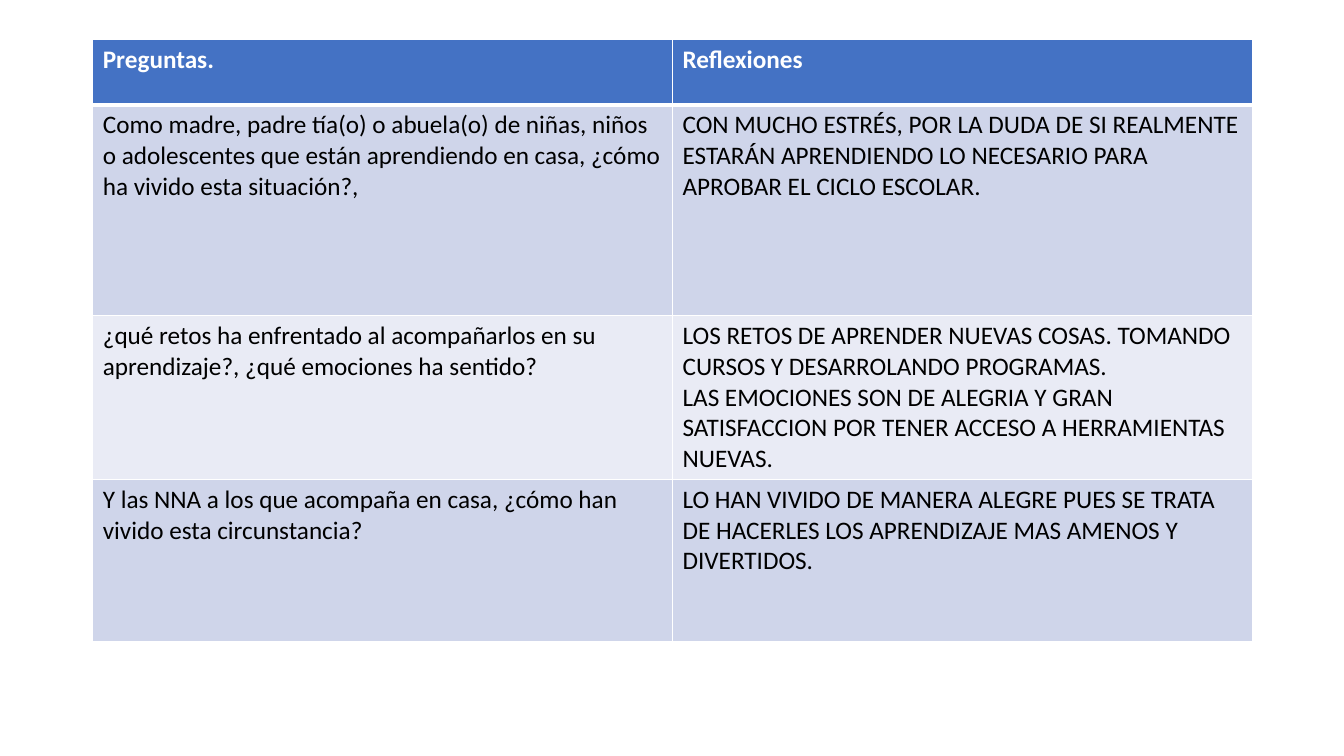
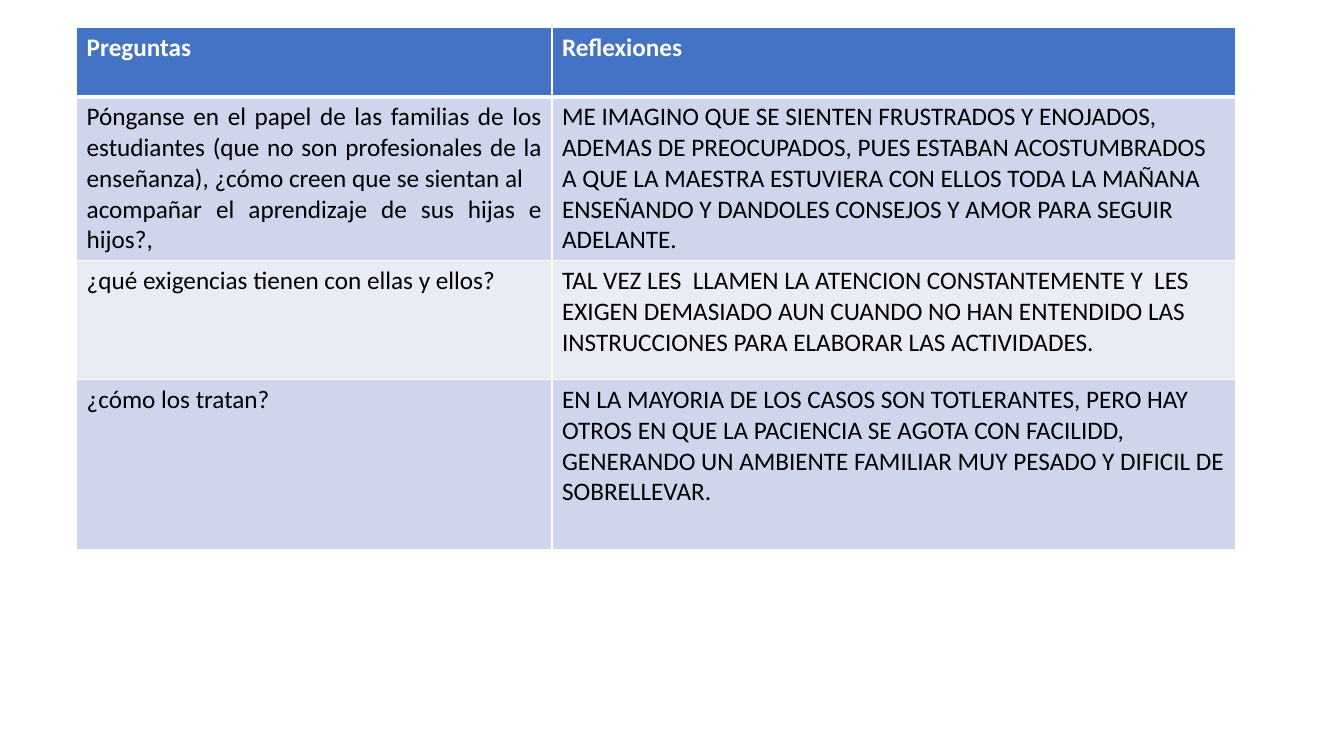
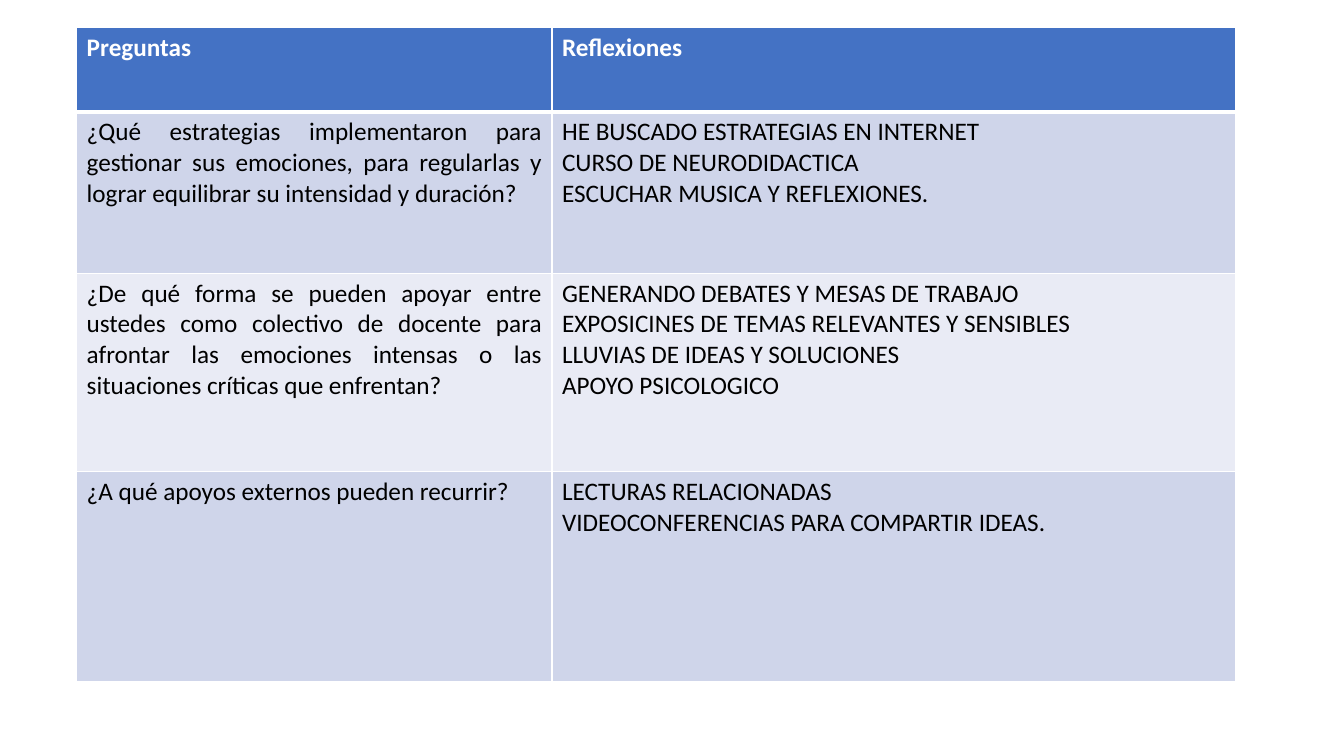
from lxml.etree import SubElement
from pptx import Presentation
from pptx.dml.color import RGBColor
from pptx.enum.text import PP_ALIGN
from pptx.oxml.ns import qn
from pptx.util import Inches, Pt

HUES = {"head": "4472C4", "odd": "CFD5EA", "even": "E9EBF5", "rule": "FFFFFF", "ink": "000000"}
FONT, SIZE = "Calibri", 18
THIN, THICK = 1, 3
WIDTH = 11.5
EVEN, SPLIT = (0.5, 0.5), (0.41, 0.59)

PAGES = [
    {
        "at": (0.92, 0.39), "cols": EVEN, "rows": (0.65, 2.09, 1.61, 1.61), "align": PP_ALIGN.LEFT,
        "cells": [
            ("Preguntas.", "Reflexiones"),
            ("Como madre, padre tía(o) o abuela(o) de niñas, niños o adolescentes que están "
             "aprendiendo en casa, ¿cómo ha vivido esta situación?,",
             "CON MUCHO ESTRÉS, POR LA DUDA DE SI REALMENTE ESTARÁN APRENDIENDO LO NECESARIO "
             "PARA APROBAR EL CICLO ESCOLAR."),
            ("¿qué retos ha enfrentado al acompañarlos en su aprendizaje?, ¿qué emociones ha sentido?",
             "LOS RETOS DE APRENDER NUEVAS COSAS. TOMANDO CURSOS Y DESARROLANDO PROGRAMAS.\n"
             "LAS EMOCIONES SON DE ALEGRIA Y GRAN SATISFACCION POR TENER ACCESO A HERRAMIENTAS NUEVAS."),
            ("Y las NNA a los que acompaña en casa, ¿cómo han vivido esta circunstancia?",
             "LO HAN VIVIDO DE MANERA ALEGRE PUES SE TRATA DE HACERLES LOS APRENDIZAJE MAS AMENOS "
             "Y DIVERTIDOS."),
        ],
    },
    {
        "at": (0.76, 0.27), "cols": SPLIT, "rows": (0.69, 1.18, 1.18, 1.69), "align": PP_ALIGN.JUSTIFY,
        "cells": [
            ("Preguntas", "Reflexiones"),
            ("Pónganse en el papel de las familias de los estudiantes (que no son profesionales de la "
             "enseñanza), ¿cómo creen que se sientan al\n"
             "acompañar el aprendizaje de sus hijas e hijos?,",
             "ME IMAGINO QUE SE SIENTEN FRUSTRADOS Y ENOJADOS, ADEMAS DE PREOCUPADOS, PUES ESTABAN "
             "ACOSTUMBRADOS A QUE LA MAESTRA ESTUVIERA CON ELLOS TODA LA MAÑANA ENSEÑANDO Y DANDOLES "
             "CONSEJOS Y AMOR PARA SEGUIR ADELANTE."),
            ("¿qué exigencias tienen con ellas y ellos?",
             "TAL VEZ LES  LLAMEN LA ATENCION CONSTANTEMENTE Y  LES EXIGEN DEMASIADO AUN CUANDO NO HAN "
             "ENTENDIDO LAS INSTRUCCIONES PARA ELABORAR LAS ACTIVIDADES."),
            ("¿cómo los tratan?",
             "EN LA MAYORIA DE LOS CASOS SON TOTLERANTES, PERO HAY OTROS EN QUE LA PACIENCIA SE AGOTA "
             "CON FACILIDD, GENERANDO UN AMBIENTE FAMILIAR MUY PESADO Y DIFICIL DE SOBRELLEVAR."),
        ],
    },
    {
        "at": (0.76, 0.27), "cols": SPLIT, "rows": (0.84, 1.6, 1.97, 2.08), "align": PP_ALIGN.JUSTIFY,
        "cells": [
            ("Preguntas", "Reflexiones"),
            ("¿Qué estrategias implementaron para gestionar sus emociones, para regularlas y lograr "
             "equilibrar su intensidad y duración?",
             "HE BUSCADO ESTRATEGIAS EN INTERNET\nCURSO DE NEURODIDACTICA\n"
             "ESCUCHAR MUSICA Y REFLEXIONES."),
            ("¿De qué forma se pueden apoyar entre ustedes como colectivo de docente para afrontar las "
             "emociones intensas o las situaciones críticas que enfrentan?",
             "GENERANDO DEBATES Y MESAS DE TRABAJO\nEXPOSICINES DE TEMAS RELEVANTES Y SENSIBLES\n"
             "LLUVIAS DE IDEAS Y SOLUCIONES\nAPOYO PSICOLOGICO"),
            ("¿A qué apoyos externos pueden recurrir?",
             "LECTURAS RELACIONADAS\nVIDEOCONFERENCIAS PARA COMPARTIR IDEAS."),
        ],
    },
]


def hue(name):
    """Return the named colour."""
    return RGBColor.from_string(HUES[name])


def rule(cell, row):
    """Draw the cell's borders, with a thick line under the header."""
    props = cell._tc.get_or_add_tcPr()
    sides = {"L": THIN, "R": THIN,
             "T": THICK if row == 1 else THIN,
             "B": THICK if row == 0 else THIN}
    for side, width in sides.items():
        line = SubElement(props, qn(f"a:ln{side}"), w=str(Pt(width)))
        fill = SubElement(line, qn("a:solidFill"))
        SubElement(fill, qn("a:srgbClr"), val=HUES["rule"])


def write(cell, text, row, align):
    """Fill one cell with its colour and formatted text."""
    head = row == 0
    rule(cell, row)
    cell.fill.solid()
    cell.fill.fore_color.rgb = hue("head" if head else "odd" if row % 2 else "even")
    cell.text_frame.text = text
    for para in cell.text_frame.paragraphs:
        para.alignment = align
        for run in para.runs:
            font = run.font
            font.name, font.size, font.bold = FONT, Pt(SIZE), head
            font.color.rgb = hue("rule" if head else "ink")


def grid(slide, page):
    """Place a table of questions and reflections at the page's corner."""
    left, top = page["at"]
    cols, rows = page["cols"], page["rows"]
    table = slide.shapes.add_table(len(rows), len(cols), Inches(left), Inches(top),
                                   Inches(WIDTH), Inches(sum(rows))).table
    for col, share in zip(table.columns, cols):
        col.width = Inches(WIDTH * share)
    for row, tall in zip(table.rows, rows):
        row.height = Inches(tall)
    for row, texts in enumerate(page["cells"]):
        for col, text in enumerate(texts):
            align = page["align"] if row and col == 0 else PP_ALIGN.LEFT
            write(table.cell(row, col), text, row, align)


def main():
    """Build and save the deck."""
    deck = Presentation()
    deck.slide_width, deck.slide_height = Inches(13.33), Inches(7.5)
    for page in PAGES:
        grid(deck.slides.add_slide(deck.slide_layouts[6]), page)
    deck.save("out.pptx")


if __name__ == "__main__":
    main()
